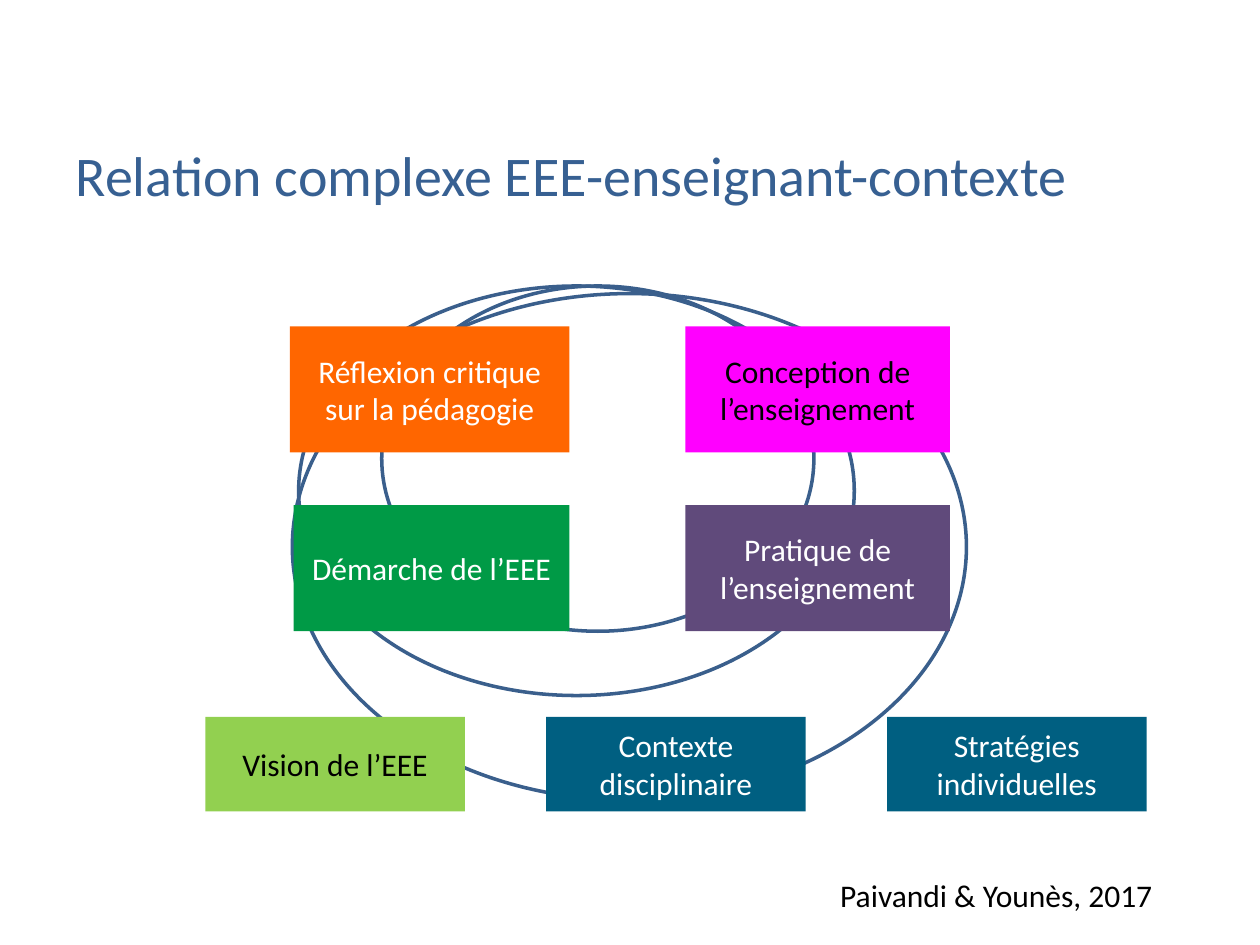
from dataclasses import dataclass

from pptx import Presentation
from pptx.dml.color import RGBColor
from pptx.enum import shapes as kinds, text as txt
from pptx.util import Inches, Pt

WHITE = RGBColor(0xFF, 0xFF, 0xFF)
BLACK = RGBColor(0x00, 0x00, 0x00)
BLUE = RGBColor(0x37, 0x60, 0x92)
RING = RGBColor(0x3A, 0x5F, 0x8C)
ORANGE = RGBColor(0xFF, 0x66, 0x00)
PINK = RGBColor(0xFF, 0x00, 0xFF)
PURPLE = RGBColor(0x60, 0x4A, 0x7B)
GREEN = RGBColor(0x00, 0x9A, 0x46)
LIME = RGBColor(0x92, 0xD0, 0x50)
TEAL = RGBColor(0x00, 0x5F, 0x81)


@dataclass
class Area:
    left: float
    top: float
    width: float
    height: float

    def lengths(self) -> list:
        return [Inches(n) for n in (self.left, self.top, self.width, self.height)]


@dataclass
class Box:
    words: str
    area: Area
    fill: RGBColor
    ink: RGBColor = WHITE


TOP, MID, LOW = 2.59, 4.01, 5.69
RIGHT = 5.44
BASE, STEP = 1.63, 2.705

RINGS = [
    Area(2.32, 2.33, 5.35, 4.02),
    Area(2.37, 2.27, 4.41, 3.25),
    Area(3.03, 2.27, 3.43, 2.74),
]
BOXES = [
    Box("Réflexion critique sur la pédagogie", Area(2.3, TOP, 2.22, 1), ORANGE),
    Box("Conception de l’enseignement", Area(RIGHT, TOP, 2.1, 1), PINK, BLACK),
    Box("Pratique de l’enseignement", Area(RIGHT, MID, 2.1, 1), PURPLE),
    Box("Démarche de l’EEE", Area(2.33, MID, 2.19, 1), GREEN),
]
BASES = [
    ("Vision de l’EEE", LIME, BLACK),
    ("Contexte disciplinaire", TEAL, WHITE),
    ("Stratégies individuelles", TEAL, WHITE),
]
BOXES += [
    Box(words, Area(BASE + i * STEP, LOW, 2.06, 0.75), fill, ink)
    for i, (words, fill, ink) in enumerate(BASES)
]


def style(para, size: int, ink: RGBColor, align) -> None:
    para.alignment = align
    para.font.name = "Calibri"
    para.font.size = Pt(size)
    para.font.color.rgb = ink


def draw_ring(slide, area: Area) -> None:
    ring = slide.shapes.add_shape(kinds.MSO_SHAPE.OVAL, *area.lengths())
    ring.shadow.inherit = False
    ring.fill.background()
    ring.line.color.rgb = RING
    ring.line.width = Pt(2)


def draw_box(slide, box: Box) -> None:
    shape = slide.shapes.add_shape(kinds.MSO_SHAPE.RECTANGLE, *box.area.lengths())
    shape.shadow.inherit = False
    shape.fill.solid()
    shape.fill.fore_color.rgb = box.fill
    shape.line.fill.background()
    frame = shape.text_frame
    frame.text = box.words
    frame.word_wrap = True
    frame.vertical_anchor = txt.MSO_ANCHOR.MIDDLE
    style(frame.paragraphs[0], 18, box.ink, txt.PP_ALIGN.CENTER)


def draw_title(slide, words: str, area: Area) -> None:
    title = slide.shapes.title
    title.left, title.top, title.width, title.height = area.lengths()
    frame = title.text_frame
    frame.text = words
    frame.vertical_anchor = txt.MSO_ANCHOR.MIDDLE
    style(frame.paragraphs[0], 32, BLUE, txt.PP_ALIGN.LEFT)


def draw_note(slide, words: str, area: Area) -> None:
    frame = slide.shapes.add_textbox(*area.lengths()).text_frame
    frame.text = words
    frame.word_wrap = True
    frame.auto_size = txt.MSO_AUTO_SIZE.SHAPE_TO_FIT_TEXT
    style(frame.paragraphs[0], 18, BLACK, txt.PP_ALIGN.LEFT)


def main() -> None:
    deck = Presentation()
    deck.slide_width, deck.slide_height = Inches(10), Inches(7.5)
    slide = deck.slides.add_slide(deck.slide_layouts[5])
    for ring in RINGS:
        draw_ring(slide, ring)
    draw_title(slide, "Relation complexe EEE-enseignant-contexte", Area(0.5, 0.85, 9.01, 1.07))
    for box in BOXES:
        draw_box(slide, box)
    draw_note(slide, "Paivandi & Younès, 2017", Area(6.57, 6.9, 3.07, 0.4))
    deck.save("out.pptx")


if __name__ == "__main__":
    main()
